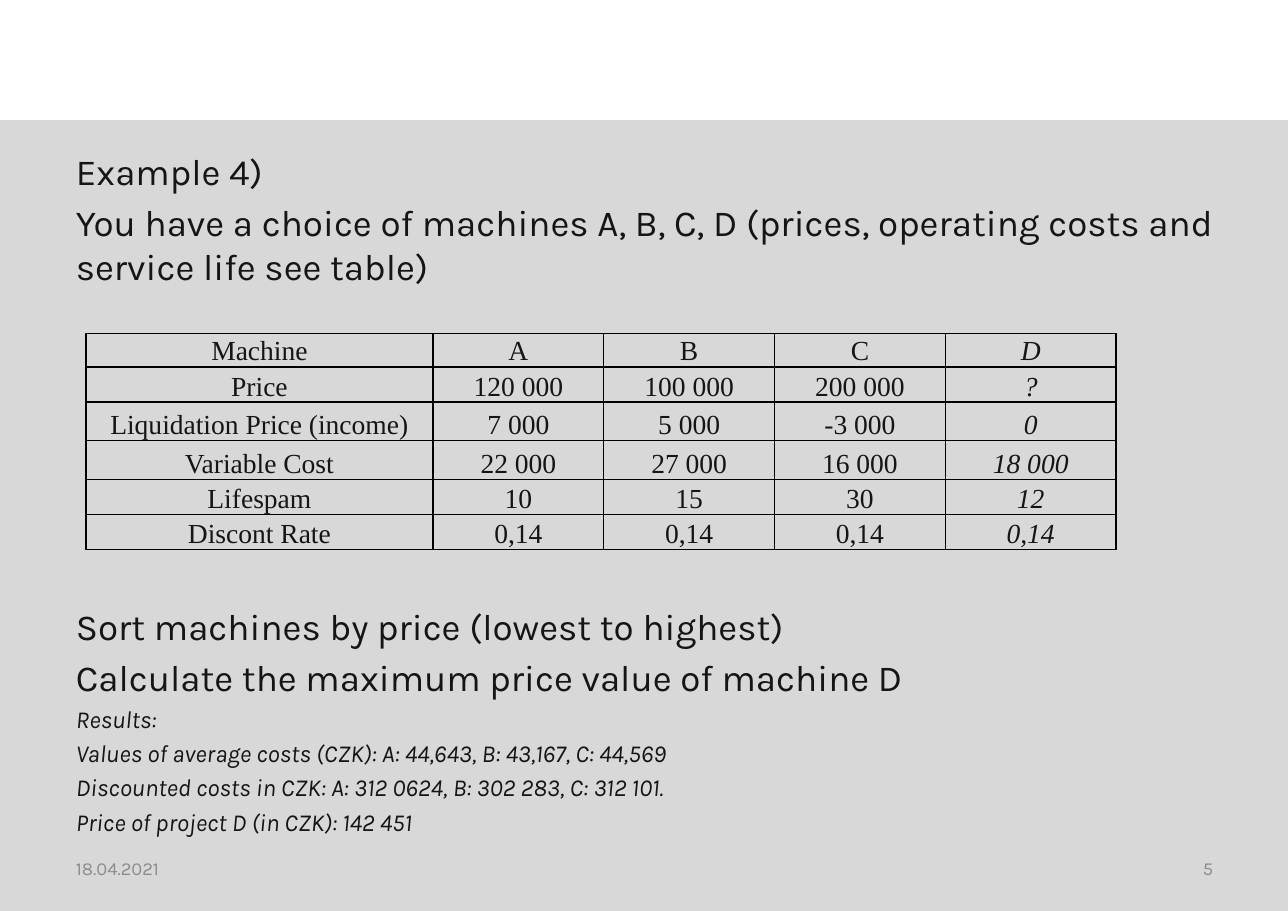
from lxml.etree import SubElement
from pptx import Presentation
from pptx.dml.color import RGBColor
from pptx.enum.shapes import MSO_SHAPE
from pptx.enum.text import MSO_ANCHOR, PP_ALIGN
from pptx.oxml.ns import qn
from pptx.util import Inches, Pt

INK = RGBColor(0x15, 0x15, 0x15)
GRAY = RGBColor(0x8C, 0x8C, 0x8C)
PANEL = RGBColor(0xD8, 0xD8, 0xD8)
BLACK = RGBColor(0, 0, 0)

TASK = [
    "Example 4)",
    "You have a choice of machines A, B, C, D (prices, operating costs "
    "and service life see table)",
]
GOALS = [
    "Sort machines by price (lowest to highest)",
    "Calculate the maximum price value of machine D",
]
RESULTS = [
    "Results:",
    "Values of average costs (CZK): A: 44,643, B: 43,167, C: 44,569",
    "Discounted costs in CZK: A: 312 0624, B: 302 283, C: 312 101.",
    "Price of project D (in CZK): 142 451",
]
ROWS = [
    ["Machine", "A", "B", "C", "D"],
    ["Price", "120 000", "100 000", "200 000", "?"],
    ["Liquidation Price (income)", "7 000", "5 000", "-3 000", "0"],
    ["Variable Cost", "22 000", "27 000", "16 000", "18 000"],
    ["Lifespam", "10", "15", "30", "12"],
    ["Discont Rate", "0,14", "0,14", "0,14", "0,14"],
]
WIDTHS = [3.15] + [1.55] * 4
HEIGHTS = [0.28, 0.32, 0.35, 0.35, 0.32, 0.32]


class Page:
    body = "Karla"
    serif = "Times New Roman"

    def __init__(self, slide):
        self.slide = slide

    def style(self, para, size, color=INK, name=body, italic=False):
        font = para.font
        font.name, font.size, font.italic = name, Pt(size), italic
        font.color.rgb = color

    def panel(self, *area):
        shape = self.slide.shapes.add_shape(
            MSO_SHAPE.RECTANGLE, *map(Inches, area))
        shape.shadow.inherit = False
        shape.fill.solid()
        shape.fill.fore_color.rgb = PANEL
        shape.line.fill.background()

    def text(self, area, items, anchor=MSO_ANCHOR.TOP, align=PP_ALIGN.LEFT):
        frame = self.slide.shapes.add_textbox(*map(Inches, area)).text_frame
        frame.word_wrap = True
        frame.vertical_anchor = anchor
        for index, (line, size, color, italic) in enumerate(items):
            para = frame.add_paragraph() if index else frame.paragraphs[0]
            para.text = line
            para.alignment = align
            if index:
                para.space_before = Pt(size * 0.2)
            self.style(para, size, color, italic=italic)

    def border(self, cell):
        props = cell._tc.get_or_add_tcPr()
        for side in ("a:lnL", "a:lnR", "a:lnT", "a:lnB"):
            line = SubElement(props, qn(side), w=str(Pt(1)))
            fill = SubElement(line, qn("a:solidFill"))
            SubElement(fill, qn("a:srgbClr"), val=str(BLACK))

    def table(self, left, top, rows, widths, heights):
        area = (left, top, sum(widths), sum(heights))
        table = self.slide.shapes.add_table(
            len(rows), len(widths), *map(Inches, area)).table
        table.first_row = table.horz_banding = False
        for column, width in zip(table.columns, widths):
            column.width = Inches(width)
        for row, height, values in zip(table.rows, heights, rows):
            row.height = Inches(height)
            for index, (cell, value) in enumerate(zip(row.cells, values)):
                self.cell(cell, value, index == len(widths) - 1)

    def cell(self, cell, value, italic):
        self.border(cell)
        cell.fill.background()
        cell.vertical_anchor = MSO_ANCHOR.BOTTOM
        cell.margin_left = cell.margin_right = Inches(0.05)
        cell.margin_top = cell.margin_bottom = 0
        para = cell.text_frame.paragraphs[0]
        para.text = value
        para.alignment = PP_ALIGN.CENTER
        self.style(para, 18, name=self.serif, italic=italic)


def main():
    deck = Presentation()
    deck.slide_width, deck.slide_height = Inches(11.69), Inches(8.27)
    page = Page(deck.slides.add_slide(deck.slide_layouts[6]))
    page.panel(0, 1.09, 11.69, 7.18)
    page.text((0.59, 1.3, 10.52, 1.4),
              [(line, 24, INK, False) for line in TASK])
    page.table(0.78, 3.03, ROWS, WIDTHS, HEIGHTS)
    page.text((0.59, 5.43, 10.52, 2.2),
              [(line, 24, INK, False) for line in GOALS]
              + [(line, 16, INK, True) for line in RESULTS])
    page.text((0.59, 7.66, 2.73, 0.44), [("18.04.2021", 12, GRAY, False)],
              MSO_ANCHOR.MIDDLE)
    page.text((8.38, 7.66, 2.73, 0.44), [("5", 12, GRAY, False)],
              MSO_ANCHOR.MIDDLE, PP_ALIGN.RIGHT)
    deck.save("out.pptx")


if __name__ == "__main__":
    main()
